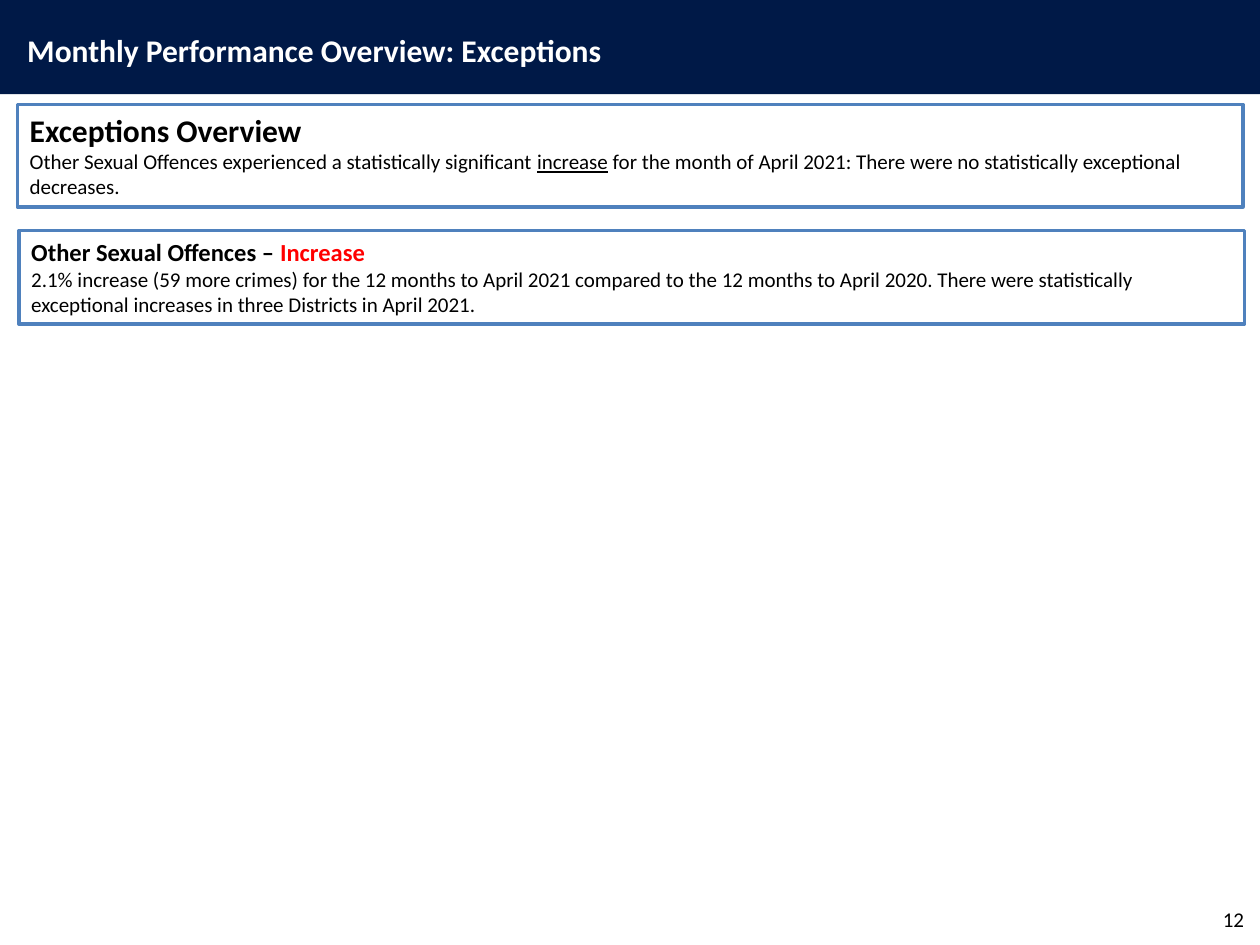
from dataclasses import dataclass, field

from pptx import Presentation
from pptx.dml.color import RGBColor
from pptx.enum.shapes import MSO_SHAPE
from pptx.enum.text import MSO_ANCHOR, PP_ALIGN
from pptx.util import Cm, Pt

RECT = MSO_SHAPE.RECTANGLE
TOP, MIDDLE = MSO_ANCHOR.TOP, MSO_ANCHOR.MIDDLE
LEFT, RIGHT = PP_ALIGN.LEFT, PP_ALIGN.RIGHT

FONT = "Calibri"
COLORS = {
    "navy": "001947",
    "blue": "4F81BD",
    "white": "FFFFFF",
    "black": "000000",
    "red": "FF0000",
}


@dataclass
class Run:
    text: str
    size: int = 12
    color: str = "black"
    style: dict = field(default_factory=dict)


@dataclass
class Box:
    """A block of text; lengths in centimetres, one list of runs per paragraph."""
    left: float
    top: float
    width: float
    height: float
    paragraphs: list[list[Run]]
    fill: str | None = None
    line: str | None = None
    align: PP_ALIGN = LEFT
    anchor: MSO_ANCHOR = TOP


def rgb(name: str) -> RGBColor:
    return RGBColor.from_string(COLORS[name])


def write_text(tf, box: Box) -> None:
    tf.word_wrap = True
    tf.vertical_anchor = box.anchor
    for i, runs in enumerate(box.paragraphs):
        p = tf.paragraphs[0] if i == 0 else tf.add_paragraph()
        p.alignment = box.align
        for run in runs:
            r = p.add_run()
            r.text = run.text
            r.font.color.rgb = rgb(run.color)
            values = {"name": FONT, "size": Pt(run.size), **run.style}
            for name, value in values.items():
                setattr(r.font, name, value)


def draw_box(s, box: Box) -> None:
    frame = [Cm(v) for v in (box.left, box.top, box.width, box.height)]
    if box.fill is None:
        sp = s.shapes.add_textbox(*frame)
    else:
        sp = s.shapes.add_shape(RECT, *frame)
        sp.shadow.inherit = False
        sp.fill.solid()
        sp.fill.fore_color.rgb = rgb(box.fill)
        if box.line:
            sp.line.color.rgb = rgb(box.line)
            sp.line.width = Pt(2)
        else:
            sp.line.fill.background()
    write_text(sp.text_frame, box)


BOLD = {"bold": True}
PANEL = {"width": 24.71, "fill": "white", "line": "blue"}

BOXES = [
    # Header band and title
    Box(0, 0, 25.4, 1.9, [], fill="navy"),
    Box(0.3, 0.51, 14.4, 1.02,
        [[Run("Monthly Performance Overview: Exceptions", 18, "white", BOLD)]]),
    # Page number
    Box(19.41, 18.01, 5.92, 1.02, [[Run("12")]], align=RIGHT, anchor=MIDDLE),
    # Overview panel
    Box(left=0.35, top=2.11, height=2.06, **PANEL, paragraphs=[
        [Run("Exceptions Overview", 18, style=BOLD)],
        [Run("Other Sexual Offences experienced a statistically significant "),
         Run("increase", style={"underline": True}),
         Run(" for the month of April 2021: There were no statistically "
             "exceptional decreases.")],
    ]),
    # Offence panel
    Box(left=0.38, top=4.65, height=1.88, **PANEL, paragraphs=[
        [Run("Other Sexual Offences – ", 14, style=BOLD),
         Run("Increase", 14, "red", BOLD)],
        [Run("2.1% increase (59 more crimes) for the 12 months to April 2021 "
             "compared to the 12 months to April 2020. There were statistically "
             "exceptional increases in three Districts in April 2021.")],
    ]),
]


def main() -> None:
    prs = Presentation()
    prs.slide_width, prs.slide_height = Cm(25.4), Cm(19.05)
    s = prs.slides.add_slide(prs.slide_layouts[6])
    for box in BOXES:
        draw_box(s, box)
    prs.save("out.pptx")


if __name__ == "__main__":
    main()
